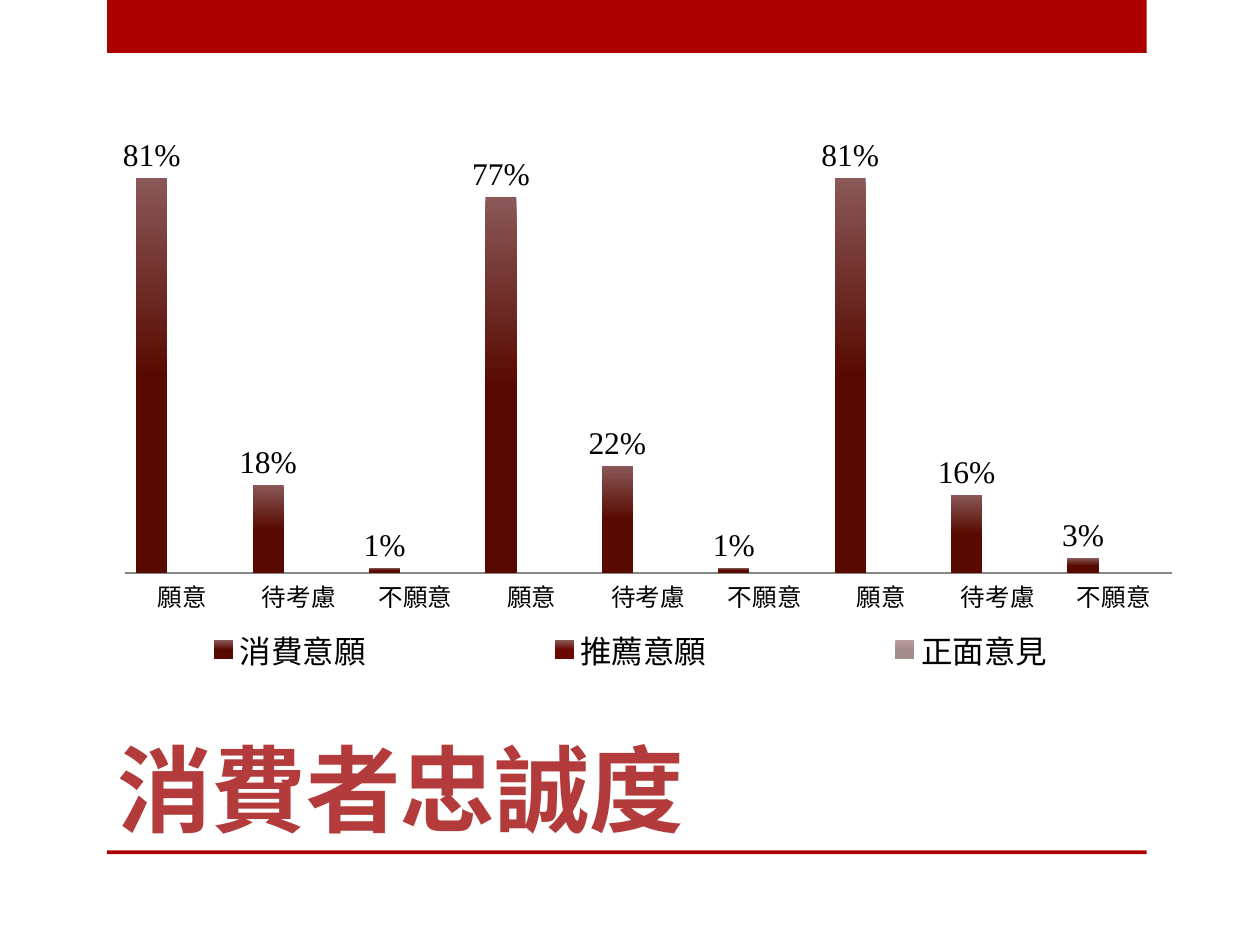
from lxml import etree
from pptx import Presentation
from pptx.chart.data import CategoryChartData
from pptx.dml.color import RGBColor
from pptx.enum.chart import XL_CHART_TYPE, XL_LABEL_POSITION, XL_LEGEND_POSITION, XL_TICK_MARK
from pptx.enum.shapes import MSO_SHAPE
from pptx.enum.text import MSO_ANCHOR, MSO_AUTO_SIZE, PP_ALIGN
from pptx.oxml.ns import qn
from pptx.util import Inches, Pt

COLUMN = XL_CHART_TYPE.COLUMN_CLUSTERED
OUTSIDE_END = XL_LABEL_POSITION.OUTSIDE_END
LEGEND_BOTTOM = XL_LEGEND_POSITION.BOTTOM
NO_TICK = XL_TICK_MARK.NONE
RECTANGLE = MSO_SHAPE.RECTANGLE
ANCHOR_BOTTOM = MSO_ANCHOR.BOTTOM
NO_AUTO_SIZE = MSO_AUTO_SIZE.NONE
LEFT = PP_ALIGN.LEFT

RED = RGBColor(0xAD, 0x01, 0x01)
TITLE_RED = RGBColor(0xB3, 0x3B, 0x3B)
BLACK = RGBColor(0, 0, 0)
AXIS_GRAY = RGBColor(0x86, 0x86, 0x86)
GLOSS = RGBColor(0x8A, 0x58, 0x58)
DARK_RED = RGBColor(0x58, 0x0A, 0x00)
DEEP_RED = RGBColor(0x6A, 0x08, 0x00)
PALE_GLOSS = RGBColor(0xB8, 0x9C, 0x9C)
PALE_RED = RGBColor(0xA4, 0x8C, 0x8C)

SERIES_COLORS = [(GLOSS, DARK_RED), (GLOSS, DEEP_RED), (PALE_GLOSS, PALE_RED)]
CATEGORIES = ["願意", "待考慮", "不願意"] * 3
SHARES = [0.81, 0.18, 0.01, 0.77, 0.22, 0.01, 0.81, 0.16, 0.03]
SERIES = {
    "消費意願": SHARES,
    "推薦意願": [None] * len(SHARES),
    "正面意見": [None] * len(SHARES),
}


class SlideBuilder:
    title_font = "Roboto Condensed"
    chart_font = "Times New Roman"

    def __init__(self, presentation):
        self.width = presentation.slide_width
        self.height = presentation.slide_height
        self.slide = presentation.slides.add_slide(presentation.slide_layouts[5])

    def box(self, left, top, width, height):
        return (round(left * self.width), round(top * self.height),
                round(width * self.width), round(height * self.height))

    def band(self, *shares):
        shape = self.slide.shapes.add_shape(RECTANGLE, *self.box(*shares))
        shape.shadow.inherit = False
        shape.fill.solid()
        shape.fill.fore_color.rgb = RED
        shape.line.fill.background()

    def title(self, text, *shares):
        shape = self.slide.shapes.title
        shape.left, shape.top, shape.width, shape.height = self.box(*shares)
        frame = shape.text_frame
        frame.text = text
        frame.auto_size = NO_AUTO_SIZE
        frame.vertical_anchor = ANCHOR_BOTTOM
        paragraph = frame.paragraphs[0]
        paragraph.alignment = LEFT
        paragraph.font.name = self.title_font
        paragraph.font.size = Pt(54)
        paragraph.font.bold = True
        paragraph.font.color.rgb = TITLE_RED

    def column_chart(self, categories, series, *shares):
        data = CategoryChartData(number_format="0%")
        data.categories = categories
        for name, values in series.items():
            data.add_series(name, values)
        chart = self.slide.shapes.add_chart(COLUMN, *self.box(*shares), data).chart
        chart.has_title = False
        chart.font.name = self.chart_font
        chart.font.size = Pt(18)
        chart.font.color.rgb = BLACK
        self.style_axes(chart)
        self.style_columns(chart.plots[0])
        chart.has_legend = True
        chart.legend.position = LEGEND_BOTTOM
        chart.legend.include_in_layout = False
        self.place(chart.legend._element, 0, 0.89, 1, 0.1)
        plot_area = chart._chartSpace.chart.plotArea
        self.place(plot_area, 0.075, 0.065, 0.88, 0.745, inner=True)

    def style_axes(self, chart):
        value_axis = chart.value_axis
        value_axis.visible = False
        value_axis.has_major_gridlines = False
        value_axis.minimum_scale = 0
        value_axis.maximum_scale = 0.9
        category_axis = chart.category_axis
        category_axis.major_tick_mark = NO_TICK
        category_axis.tick_labels.font.size = Pt(14)
        category_axis.format.line.color.rgb = AXIS_GRAY

    def style_columns(self, plot):
        plot.gap_width = 75
        plot.overlap = 0
        plot.vary_by_categories = False
        plot.has_data_labels = True
        labels = plot.data_labels
        labels.show_value = True
        labels.number_format = "0%"
        labels.number_format_is_linked = False
        labels.position = OUTSIDE_END
        for series, colors in zip(plot.series, SERIES_COLORS):
            fill = series.format.fill
            fill.gradient()
            fill.gradient_angle = 270
            for stop, color, position in zip(fill.gradient_stops, colors, (0, 0.5)):
                stop.color.rgb = color
                stop.position = position

    def place(self, element, left, top, width, height, inner=False):
        layout = element.find(qn("c:layout"))
        if layout is None:
            layout = etree.Element(qn("c:layout"))
            position = element.find(qn("c:legendPos"))
            if position is None:
                element.insert(0, layout)
            else:
                position.addnext(layout)
        for child in list(layout):
            layout.remove(child)
        manual = etree.SubElement(layout, qn("c:manualLayout"))
        settings = [("layoutTarget", "inner")] if inner else []
        settings += [("xMode", "edge"), ("yMode", "edge"),
                     ("x", left), ("y", top), ("w", width), ("h", height)]
        for name, value in settings:
            etree.SubElement(manual, qn(f"c:{name}")).set("val", str(value))


def main():
    presentation = Presentation()
    presentation.slide_width = Inches(10)
    presentation.slide_height = Inches(7.5)
    builder = SlideBuilder(presentation)
    builder.band(0.085, 0, 0.825, 0.056)
    builder.band(0.085, 0.9, 0.825, 0.004)
    builder.title("消費者忠誠度", 0.083, 0.73, 0.742, 0.17)
    builder.column_chart(CATEGORIES, SERIES, 0.028, 0.101, 0.945, 0.624)
    presentation.save("out.pptx")


if __name__ == "__main__":
    main()
